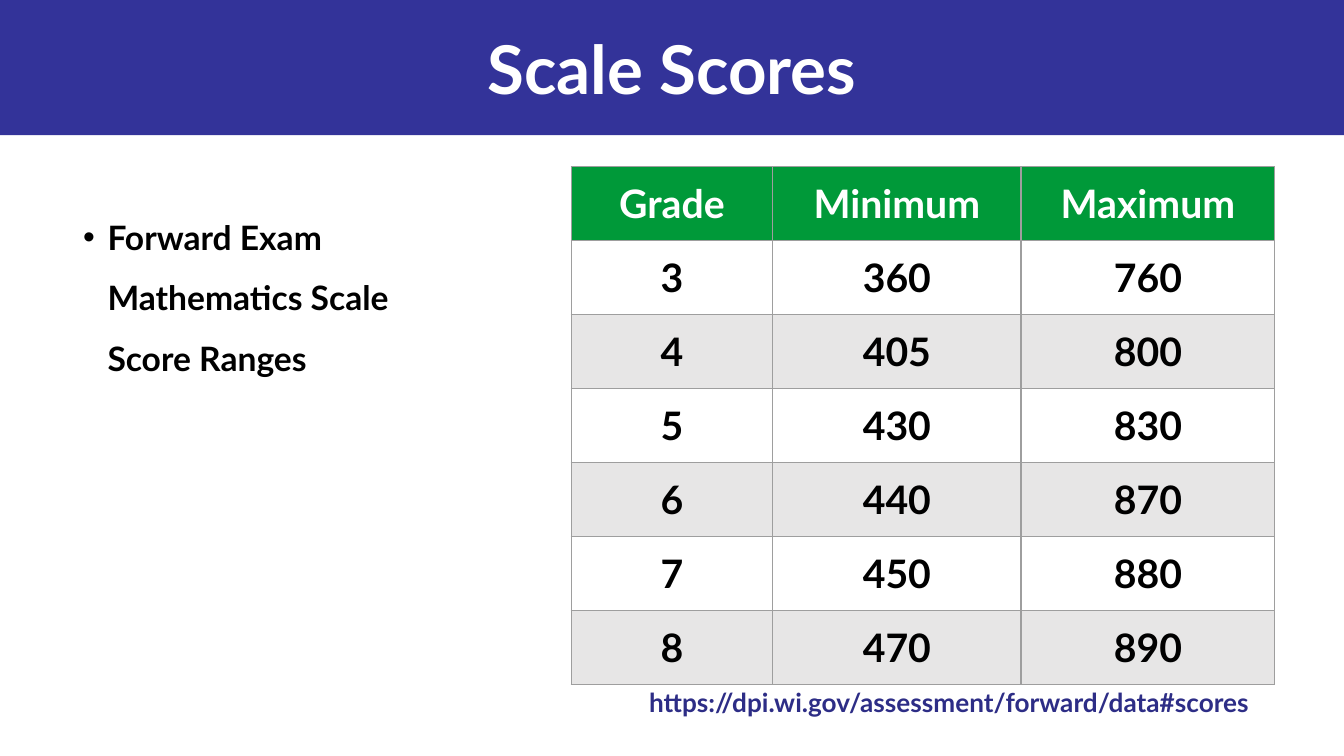
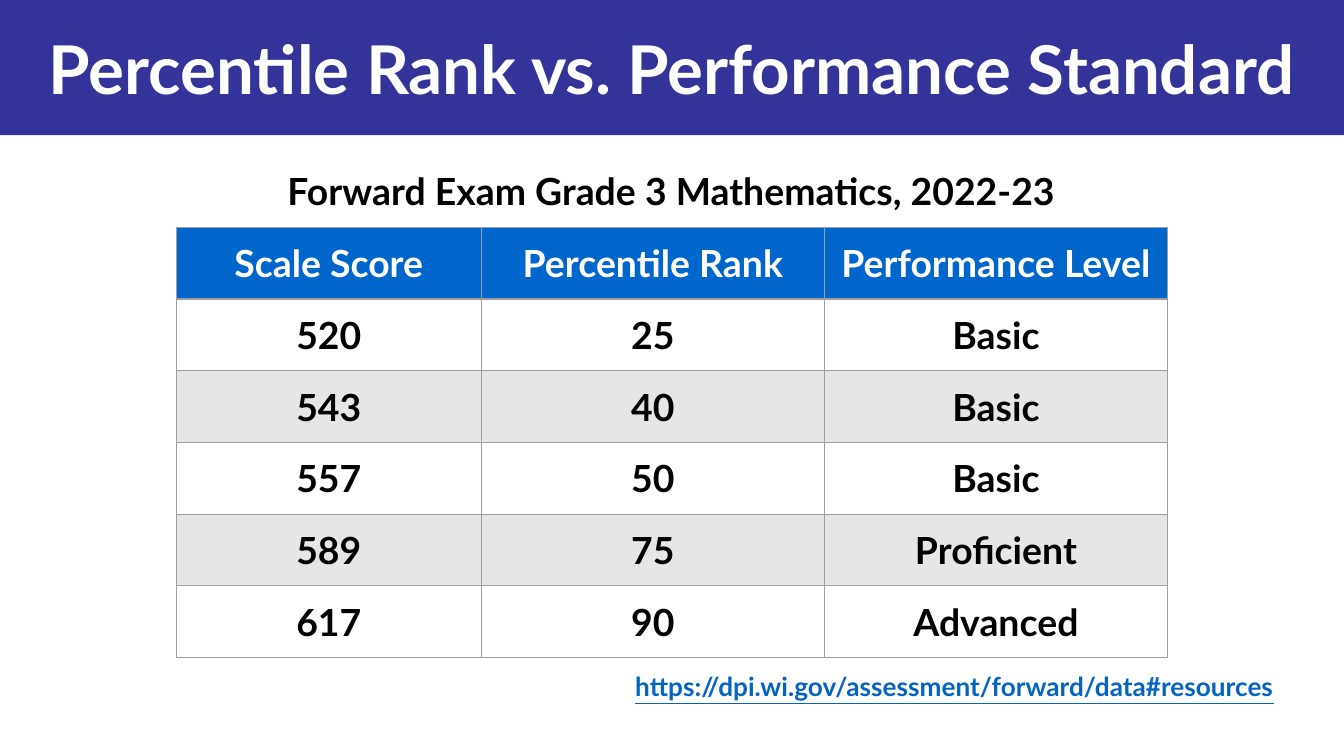
import lxml.etree
import pptx
import pptx.dml.color
import pptx.enum.shapes
import pptx.enum.text
import pptx.oxml.ns
import pptx.util

Pt = pptx.util.Pt
ALIGN = pptx.enum.text.PP_ALIGN
FONT = "Lato"
WHITE, BLACK, STRIPE, BORDER = "FFFFFF", "000000", "E7E6E6", "9E9E9E"
BAND, GREEN, BLUE = "333399", "009939", "0066CC"
SOURCE, LINK = "2D2D86", "0563C1"
WIDTH, HEIGHT, BAND_HEIGHT = 720, 405, 72.5
INSET = 7.2


def color(value):
    return pptx.dml.color.RGBColor.from_string(value)


def add_element(parent, tag, **attributes):
    return lxml.etree.SubElement(parent, pptx.oxml.ns.qn(tag), attributes)


def set_values(target, values):
    for name, value in values.items():
        setattr(target, name, value)


def write(para, text, size, ink, align=ALIGN.LEFT, **extra):
    para.alignment = align
    span = para.add_run()
    span.text = text
    set_values(span.font, {"name": FONT, "size": Pt(size), "bold": True, **extra})
    span.font.color.rgb = color(ink)


def add_text(page, box, text, size, ink, align=ALIGN.LEFT, frame_values=None, **extra):
    frame = page.shapes.add_textbox(*map(Pt, box)).text_frame
    set_values(frame, {
        "word_wrap": True,
        "auto_size": pptx.enum.text.MSO_AUTO_SIZE.SHAPE_TO_FIT_TEXT,
        "margin_left": Pt(INSET), "margin_right": Pt(INSET),
        "margin_top": Pt(INSET), "margin_bottom": Pt(INSET),
        **(frame_values or {}),
    })
    para = frame.paragraphs[0]
    write(para, text, size, ink, align, **extra)
    return para


def add_bullet(page, box, text):
    para = add_text(page, box, text, 18, BLACK)
    set_values(para, {"line_spacing": 1.5, "space_after": Pt(1.8)})
    properties = para._p.get_or_add_pPr()
    properties.set("marL", str(Pt(13)))
    properties.set("indent", str(Pt(-13)))
    add_element(add_element(properties, "a:buClr"), "a:srgbClr", val=BLACK)
    add_element(properties, "a:buFont", typeface="Arial")
    add_element(properties, "a:buChar", char="•")


def add_borders(cell):
    properties = cell._tc.get_or_add_tcPr()
    for position, side in enumerate(("a:lnL", "a:lnR", "a:lnT", "a:lnB")):
        line = lxml.etree.Element(pptx.oxml.ns.qn(side), w=str(Pt(0.75)))
        add_element(add_element(line, "a:solidFill"), "a:srgbClr", val=BORDER)
        properties.insert(position, line)


def add_score_table(page, left, top, widths, row_height, size, header_fill, rows):
    box = left, top, sum(widths), row_height * len(rows)
    table = page.shapes.add_table(len(rows), len(widths), *map(Pt, box)).table
    set_values(table, {"first_row": False, "horz_banding": False})
    for column, width in zip(table.columns, widths):
        column.width = Pt(width)
    for index, values in enumerate(rows):
        table.rows[index].height = Pt(row_height)
        fill = header_fill if index == 0 else STRIPE if index % 2 == 0 else None
        for cell, value in zip(table.rows[index].cells, values):
            set_values(cell, {
                "margin_left": Pt(INSET), "margin_right": Pt(INSET),
                "margin_top": Pt(INSET), "margin_bottom": Pt(INSET),
            })
            if fill:
                cell.fill.solid()
                cell.fill.fore_color.rgb = color(fill)
            else:
                cell.fill.background()
            add_borders(cell)
            ink = BLACK if index else WHITE
            write(cell.text_frame.paragraphs[0], value, size, ink, ALIGN.CENTER)


def add_page(deck, title):
    page = deck.slides.add_slide(deck.slide_layouts[6])
    band = page.shapes.add_shape(
        pptx.enum.shapes.MSO_SHAPE.RECTANGLE, 0, 0, Pt(WIDTH), Pt(BAND_HEIGHT))
    band.shadow.inherit = False
    band.fill.solid()
    band.fill.fore_color.rgb = color(BAND)
    band.line.fill.background()
    add_text(page, (0, 0, WIDTH, BAND_HEIGHT), title, 36, WHITE, ALIGN.CENTER, {
        "auto_size": pptx.enum.text.MSO_AUTO_SIZE.NONE,
        "vertical_anchor": pptx.enum.text.MSO_ANCHOR.MIDDLE,
        "margin_top": Pt(3.6), "margin_bottom": Pt(3.6),
    })
    return page


def build_scale_scores(deck):
    page = add_page(deck, "Scale Scores")
    add_bullet(page, (37.5, 98, 217, 114.5), "Forward Exam Mathematics Scale Score Ranges")
    add_score_table(page, 306, 89.3, (108, 133, 136), 39.6, 21, GREEN, [
        ("Grade", "Minimum", "Maximum"),
        ("3", "360", "760"),
        ("4", "405", "800"),
        ("5", "430", "830"),
        ("6", "440", "870"),
        ("7", "450", "880"),
        ("8", "470", "890"),
    ])
    add_text(page, (340.6, 360.7, 350, 31.7),
             "https://dpi.wi.gov/assessment/forward/data#scores", 14, SOURCE)


def build_percentile_rank(deck):
    page = add_page(deck, "Percentile Rank vs. Performance Standard")
    add_text(page, (34.6, 82.8, 650, 38.9),
             "Forward Exam Grade 3 Mathematics, 2022-23", 20, BLACK, ALIGN.CENTER)
    add_score_table(page, 94.4, 121.7, (163.5, 183.8, 183.8), 38.4, 20, BLUE, [
        ("Scale Score", "Percentile Rank", "Performance Level"),
        ("520", "25", "Basic"),
        ("543", "40", "Basic"),
        ("557", "50", "Basic"),
        ("589", "75", "Proficient"),
        ("617", "90", "Advanced"),
    ])
    add_text(page, (333.2, 352.1, 373.7, 31.7),
             "https://dpi.wi.gov/assessment/forward/data#resources", 14, LINK, underline=True)


def main():
    deck = pptx.Presentation()
    set_values(deck, {"slide_width": Pt(WIDTH), "slide_height": Pt(HEIGHT)})
    build_scale_scores(deck)
    build_percentile_rank(deck)
    deck.save("out.pptx")


if __name__ == "__main__":
    main()
